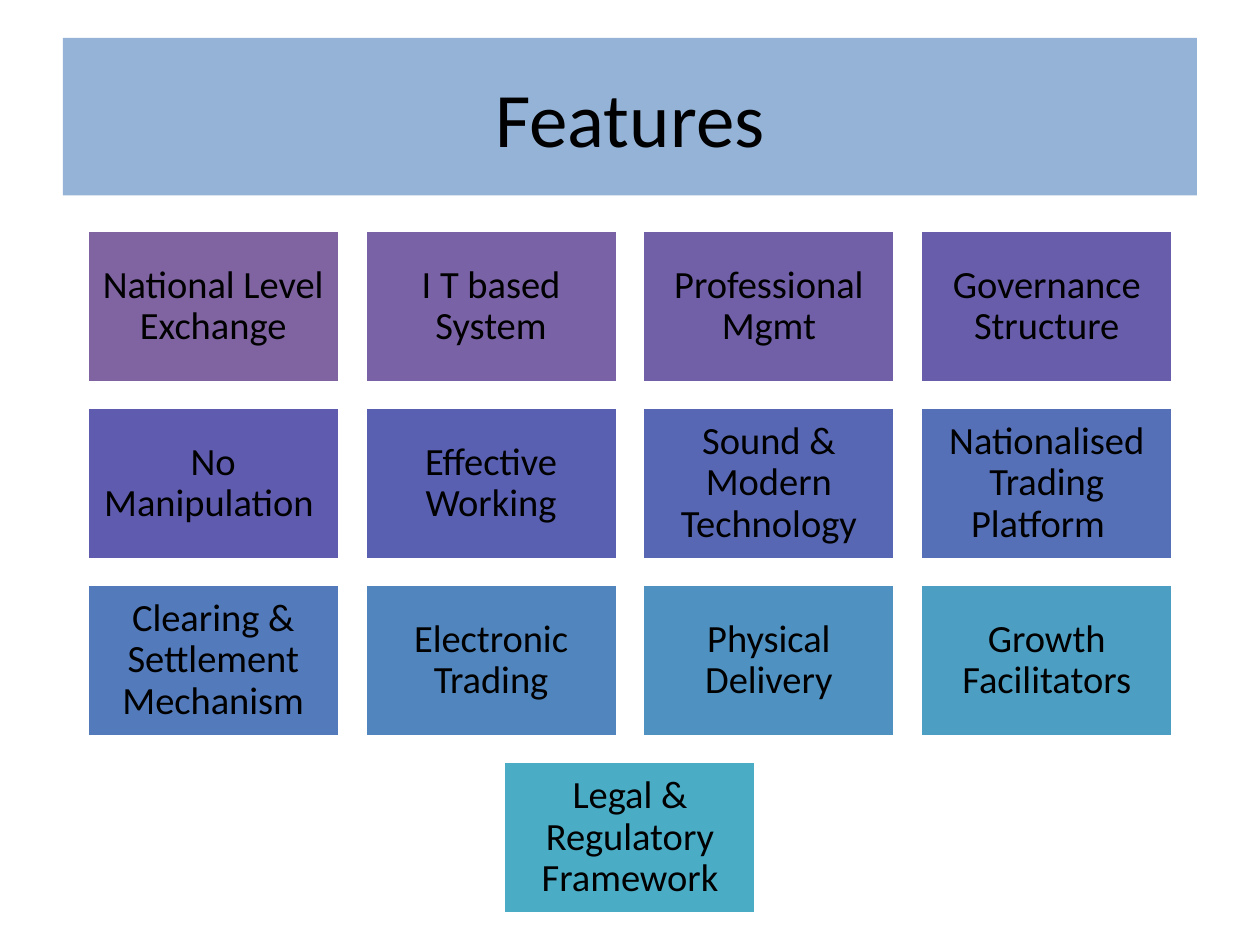
from dataclasses import dataclass

import pptx
import pptx.dml.color
import pptx.enum.shapes
import pptx.enum.text
import pptx.util


@dataclass(frozen=True)
class Theme:
    """Colours, font and type sizes of the slide."""
    font: str = "Calibri"
    text: str = "000000"
    banner: str = "95B3D7"
    border: str = "FFFFFF"
    tiles: tuple = (
        "8064A2", "7962A5", "7160A8", "685DAB", "5F5BAE", "595FB1", "5767B4",
        "5570B7", "537ABA", "5185BD", "4F91C0", "4D9EC3", "4BACC6",
    )
    title_size: int = 44
    tile_size: int = 22
    border_width: int = 2


@dataclass(frozen=True)
class Box:
    """A rectangle in inches."""
    left: float
    top: float
    width: float
    height: float


THEME = Theme()
SLIDE_WIDTH, SLIDE_HEIGHT = 10, 7.5
COLUMNS = 4
GAP_SHARE = 0.1
TILE_INSET = 0.09
FEATURES = (
    "National Level Exchange", "I T based System", "Professional Mgmt",
    "Governance Structure", "No Manipulation ", "Effective Working",
    "Sound & Modern Technology", "Nationalised Trading Platform  ",
    "Clearing & Settlement Mechanism", "Electronic Trading",
    "Physical Delivery", "Growth Facilitators",
    "Legal & Regulatory Framework",
)


def color(value):
    """Turn a hex string into a colour."""
    return pptx.dml.color.RGBColor.from_string(value)


def add_panel(slide, box, text, fill, size):
    """Add a filled rectangle with centred text."""
    lengths = (box.left, box.top, box.width, box.height)
    shape = slide.shapes.add_shape(
        pptx.enum.shapes.MSO_SHAPE.RECTANGLE, *map(pptx.util.Inches, lengths))
    shape.shadow.inherit = False
    shape.fill.solid()
    shape.fill.fore_color.rgb = color(fill)
    shape.line.fill.background()
    frame = shape.text_frame
    frame.word_wrap = True
    frame.vertical_anchor = pptx.enum.text.MSO_ANCHOR.MIDDLE
    paragraph = frame.paragraphs[0]
    paragraph.alignment = pptx.enum.text.PP_ALIGN.CENTER
    run = paragraph.add_run()
    run.text = text
    run.font.name = THEME.font
    run.font.size = pptx.util.Pt(size)
    run.font.color.rgb = color(THEME.text)
    return shape


def add_banner(slide, box):
    """Place the title banner."""
    add_panel(slide, box, "Features", THEME.banner, THEME.title_size)


def add_tile(slide, box, text, fill):
    """Place one feature tile with a border and even insets."""
    shape = add_panel(slide, box, text, fill, THEME.tile_size)
    shape.line.color.rgb = color(THEME.border)
    shape.line.width = pptx.util.Pt(THEME.border_width)
    frame = shape.text_frame
    inset = pptx.util.Inches(TILE_INSET)
    frame.margin_left = frame.margin_right = inset
    frame.margin_top = frame.margin_bottom = inset
    frame.paragraphs[0].line_spacing = 0.9


def add_feature_grid(slide, box):
    """Fill the box with rows of tiles, centring a short last row."""
    rows = -(-len(FEATURES) // COLUMNS)
    width = box.width / (COLUMNS + (COLUMNS - 1) * GAP_SHARE)
    gap = width * GAP_SHARE
    height = (box.height - (rows - 1) * gap) / rows
    for index, (text, fill) in enumerate(zip(FEATURES, THEME.tiles)):
        row, column = divmod(index, COLUMNS)
        count = min(COLUMNS, len(FEATURES) - row * COLUMNS)
        indent = (COLUMNS - count) * (width + gap) / 2
        left = box.left + indent + column * (width + gap)
        top = box.top + row * (height + gap)
        add_tile(slide, Box(left, top, width, height), text, fill)


def main():
    """Build and save the presentation."""
    presentation = pptx.Presentation()
    presentation.slide_width = pptx.util.Inches(SLIDE_WIDTH)
    presentation.slide_height = pptx.util.Inches(SLIDE_HEIGHT)
    slide = presentation.slides.add_slide(presentation.slide_layouts[6])
    add_banner(slide, Box(0.05 * SLIDE_WIDTH, 0.04 * SLIDE_HEIGHT,
                          0.9 * SLIDE_WIDTH, SLIDE_HEIGHT / 6))
    margin = 0.69
    top, bottom = 1.83, 7.25
    add_feature_grid(slide, Box(margin, top, SLIDE_WIDTH - 2 * margin,
                                bottom - top))
    presentation.save("out.pptx")


if __name__ == "__main__":
    main()
